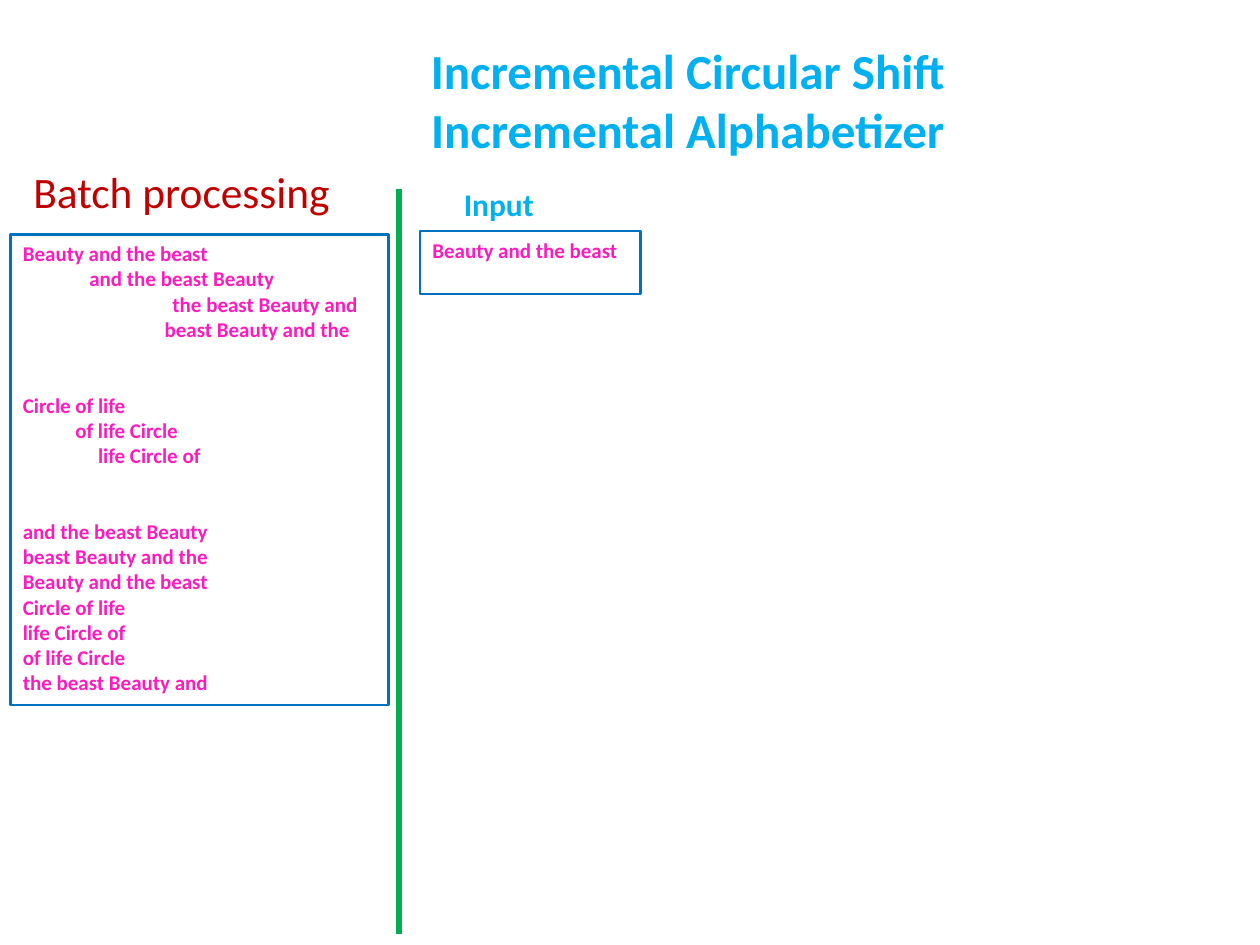
from dataclasses import dataclass
from pptx import Presentation
from pptx.dml.color import RGBColor as RGB
from pptx.enum.shapes import MSO_CONNECTOR as Line, MSO_SHAPE as Shape
from pptx.enum.text import MSO_ANCHOR as Anchor, PP_ALIGN as Align
from pptx.oxml.ns import qn
from pptx.util import Pt
from lxml import etree


@dataclass(frozen=True)
class Theme:
    font: str = "Calibri"
    sky: str = "00B0F0"
    red: str = "C00000"
    pink: str = "FC1CBC"
    blue: str = "0070C0"
    green: str = "00B050"
    title: float = 28
    head: float = 24.8
    label: float = 18
    body: float = 12
    edge: float = 1.5
    rule: float = 3.25


class Board:
    def __init__(self, slide, theme):
        self.slide = slide
        self.theme = theme

    def run(self, para, text, size, color, bold=True):
        run = para.add_run()
        run.text = text
        font = run.font
        font.name, font.size, font.bold = self.theme.font, Pt(size), bold
        font.color.rgb = RGB.from_string(color)

    def text(self, box, lines, size, color, bold=True, align=Align.LEFT,
             anchor=Anchor.TOP, wrap=True):
        area = self.slide.shapes.add_textbox(*map(Pt, box))
        frame = area.text_frame
        frame.word_wrap, frame.vertical_anchor = wrap, anchor
        para = frame.paragraphs[0]
        para.alignment = align
        for i, line in enumerate(lines):
            if i:
                para.add_line_break()
            self.run(para, line, size, color, bold)

    def panel(self, box, groups, gap=0):
        """Outlined list; each line is (indent, text), with a gap between groups."""
        rect = self.slide.shapes.add_shape(Shape.RECTANGLE, *map(Pt, box))
        rect.shadow.inherit = False
        rect.fill.background()
        rect.line.color.rgb = RGB.from_string(self.theme.blue)
        rect.line.width = Pt(self.theme.edge)
        frame = rect.text_frame
        frame.word_wrap, frame.vertical_anchor = True, Anchor.TOP
        para = None
        for group in groups:
            for i, (indent, line) in enumerate(group):
                first = para is None
                para = frame.paragraphs[0] if first else frame.add_paragraph()
                para.alignment = Align.LEFT
                if indent:
                    para._p.get_or_add_pPr().set("marL", str(Pt(indent)))
                if i == 0 and not first:
                    para.space_before = Pt(gap)
                self.run(para, line, self.theme.body, self.theme.pink)

    def rule(self, x, top, end):
        line = self.slide.shapes.add_connector(
            Line.STRAIGHT, Pt(x), Pt(top), Pt(x), Pt(end))
        line.line.color.rgb = RGB.from_string(self.theme.green)
        line.line.width = Pt(self.theme.rule)
        etree.SubElement(line._element.spPr, qn("a:effectLst"))


def main():
    deck = Presentation()
    deck.slide_width, deck.slide_height = Pt(720), Pt(540)
    theme = Theme()
    board = Board(deck.slides.add_slide(deck.slide_layouts[6]), theme)

    # Headings
    board.text((234, 12, 318, 90),
               ["Incremental Circular Shift", "Incremental Alphabetizer"],
               theme.title, theme.sky, align=Align.CENTER, anchor=Anchor.MIDDLE)
    board.text((12, 91, 198, 36), ["Batch processing"],
               theme.head, theme.red, bold=False)

    # Batch side: shifts of each phrase, then all of them sorted
    beauty = [(0, "Beauty and the beast"), (38, "and the beast Beauty"),
              (85.5, "the beast Beauty and"), (81, "beast Beauty and the")]
    circle = [(0, "Circle of life"), (30, "of life Circle"),
              (43, "life Circle of")]
    ranked = sorted((line for _, line in beauty + circle), key=str.lower)
    board.panel((6, 134, 216, 269),
                [beauty, circle, [(0, line) for line in ranked]], gap=29)

    # Incremental side
    board.panel((240, 132, 126, 36), [beauty[:1]])
    board.rule(228, 108, 534)
    board.text((258, 102, 55, 29), ["Input"], theme.label, theme.sky, wrap=False)

    deck.save("out.pptx")


if __name__ == "__main__":
    main()
